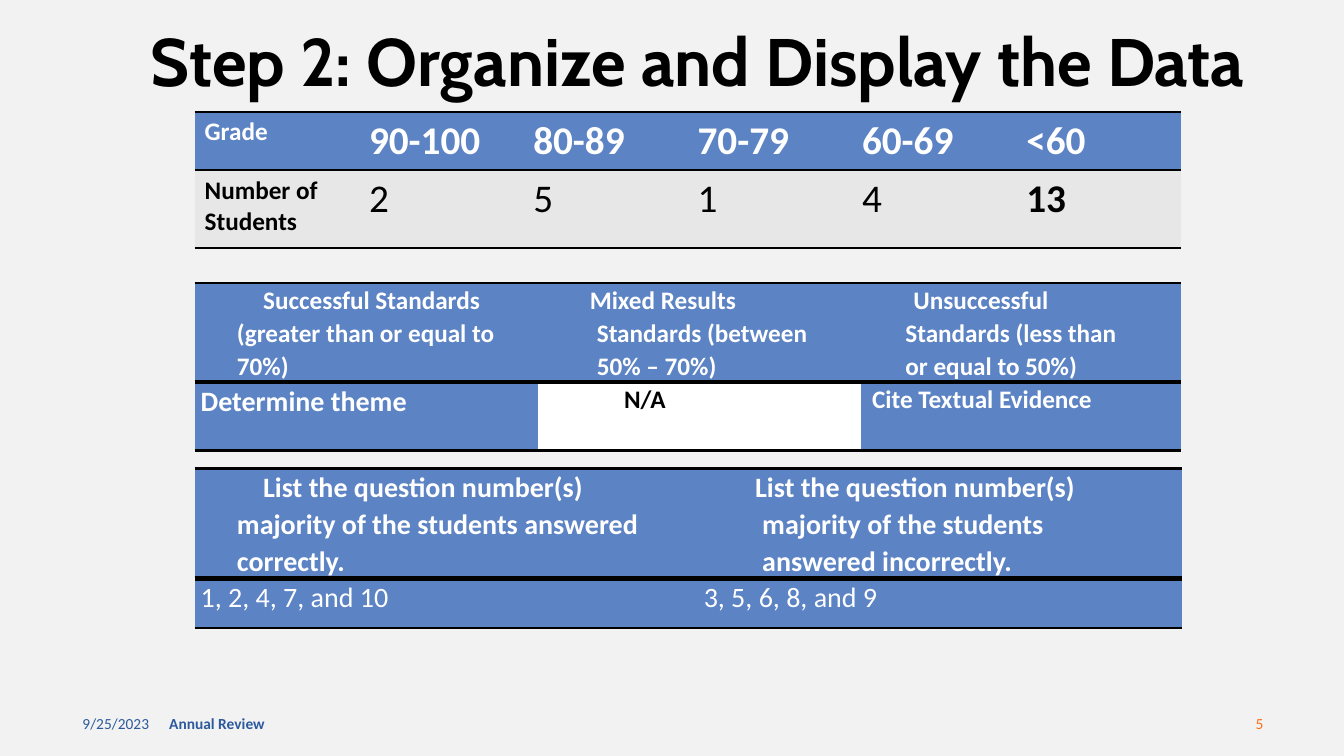
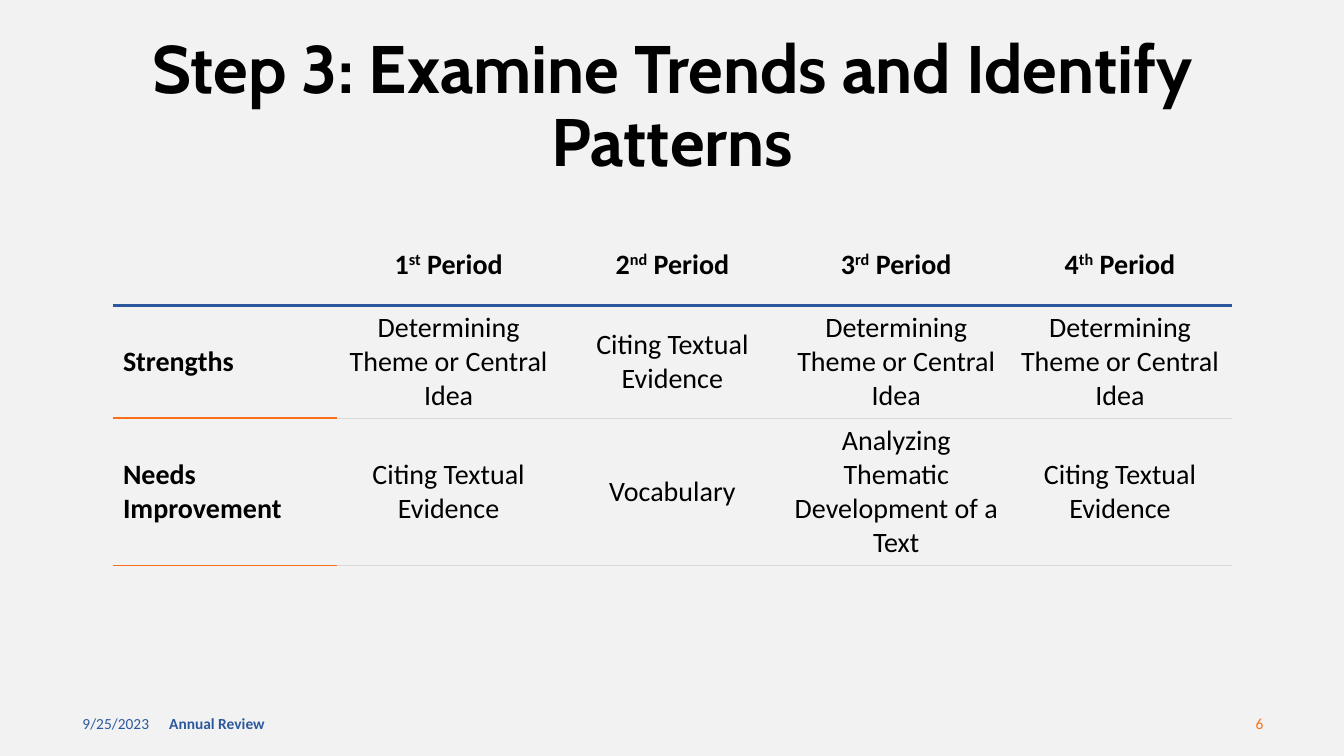
from lxml.etree import SubElement
from pptx import Presentation
from pptx.dml.color import RGBColor
from pptx.enum.text import MSO_ANCHOR, PP_ALIGN
from pptx.oxml.ns import qn
from pptx.util import Inches, Pt

BLACK, WHITE, PAGE = "000000", "FFFFFF", "F2F2F2"
BLUE, NAVY, ORANGE = "5C83C4", "2C599D", "FA6F1A"
PALE, SILVER = "E7E7E7", "D9D9D9"
PLAIN = "{2D5ABB26-0587-4C30-8999-92F81FD0307C}"

BODY = {"name": "Calibri", "size": Pt(18)}
LARGE = BODY | {"size": Pt(20)}
HUGE = BODY | {"size": Pt(28)}
BOLD = {"bold": True}
LIGHT = {"color": WHITE}
TITLE = {"name": "Cabin", "size": Pt(48)} | BOLD
SMALL = {"name": "Calibri", "size": Pt(11), "color": NAVY}
MIDDLE = {"vertical_anchor": MSO_ANCHOR.MIDDLE}
CENTER = {"alignment": PP_ALIGN.CENTER}
LOOSE = {"line_spacing": 1.07}


def rgb(code):
    return RGBColor.from_string(code)


def apply(item, values):
    for key, value in values.items():
        setattr(item, key, value)


def write(para, text, font, form):
    """Fill a paragraph; text between ^ marks is raised."""
    apply(para, form)
    look = {"color": BLACK} | font
    color = look.pop("color")
    for i, part in enumerate(text.split("^")):
        run = para.add_run()
        run.text = part
        apply(run.font, look)
        run.font.color.rgb = rgb(color)
        if i % 2:
            run.font._element.set("baseline", "30000")


def label(slide, at, text, font, form):
    box = slide.shapes.add_textbox(*map(Inches, at))
    frame = box.text_frame
    apply(frame, MIDDLE | {"word_wrap": True})
    write(frame.paragraphs[0], text, font, form)


def edge(cell, side, color, width):
    line = SubElement(cell._tc.get_or_add_tcPr(), qn("a:" + side), w=str(Pt(width)))
    fill = SubElement(line, qn("a:solidFill"))
    SubElement(fill, qn("a:srgbClr"), val=color)


def table(slide, left, top, cols, rows, lines):
    """Add a plain table; lines(row, col) gives the rule above that row, or None."""
    size = [Inches(n) for n in (left, top, sum(cols), sum(rows))]
    grid = slide.shapes.add_table(len(rows), len(cols), *size).table
    apply(grid, {"first_row": False, "horz_banding": False})
    grid._tbl.tblPr.find(qn("a:tableStyleId")).text = PLAIN
    for col, width in zip(grid.columns, cols):
        col.width = Inches(width)
    for r, height in enumerate(rows):
        grid.rows[r].height = Inches(height)
        for c in range(len(cols)):
            for side, at in (("lnT", r), ("lnB", r + 1)):
                rule = lines(at, c)
                if rule:
                    edge(grid.cell(r, c), side, *rule)
    return grid


def put(cell, text, font, form={}, fill=None, inset={}):
    apply(cell, inset)
    if fill:
        cell.fill.solid()
        cell.fill.fore_color.rgb = rgb(fill)
    else:
        cell.fill.background()
    if text:
        write(cell.text_frame.paragraphs[0], text, font, form)


def page(deck, number, title, left, top):
    slide = deck.slides.add_slide(deck.slide_layouts[6])
    slide.background.fill.solid()
    slide.background.fill.fore_color.rgb = rgb(PAGE)
    label(slide, (0.72, 6.98, 3, 0.4), "9/25/2023", SMALL, {})
    label(slide, (1.58, 6.98, 4.5, 0.4), "Annual Review", SMALL | BOLD, {})
    label(slide, (9.63, 6.98, 3, 0.4), str(number), SMALL | {"color": ORANGE},
          {"alignment": PP_ALIGN.RIGHT})
    label(slide, (left, top, 11.5, 0.77), title, TITLE, CENTER | {"line_spacing": 0.9})
    return slide


def grades(slide):
    data = [("Grade", "90-100", "80-89", "70-79", "60-69", "<60"),
            ("Number of Students", "2", "5", "1", "4", "13")]
    grid = table(slide, 1.93, 1.11, [1.63] * 6, [0.58, 0.77],
                 lambda row, col: (BLACK, 1.5))
    for r, row in enumerate(data):
        for c, text in enumerate(row):
            font = HUGE if c else BODY
            if r == 0:
                font = font | LIGHT
            font = font | {"bold": r == 0 or c in (0, 5)}
            put(grid.cell(r, c), text, font, fill=PALE if r else BLUE)


def pad(left=0, right=0):
    return {"margin_left": Inches(left), "margin_right": Inches(right),
            "margin_top": 0, "margin_bottom": 0}


def split(slide, top, cols, rows, heads, cells, font):
    """Table of indented headings above one row of (text, font, fill, inset) cells."""
    grid = table(slide, 1.93, top, cols, rows,
                 lambda row, col: (BLACK, 4 if row == 1 else 2))
    for c, (text, left, first) in enumerate(heads):
        cell = grid.cell(0, c)
        put(cell, text, font | LIGHT | BOLD, LOOSE, BLUE, pad(right=0.38))
        props = cell.text_frame.paragraphs[0]._p.get_or_add_pPr()
        for key, value in (("marL", left), ("indent", first)):
            props.set(key, str(Inches(value)))
    for c, (text, look, fill, left) in enumerate(cells):
        put(grid.cell(1, c), text, look, LOOSE, fill, pad(left))


def periods(slide):
    theme, cite = "Determining Theme or Central Idea", "Citing Textual Evidence"
    data = [("", "1^st^ Period", "2^nd^ Period", "3^rd^ Period", "4^th^ Period"),
            ("Strengths", theme, cite, theme, theme),
            ("Needs Improvement", cite, "Vocabulary",
             "Analyzing Thematic Development of a Text", cite),
            ("",) * 5]

    def rule(row, col):
        if row == 1:
            return NAVY, 3
        if row in (2, 3):
            return (SILVER, 1) if col else (ORANGE, 1.5)

    grid = table(slide, 1.12, 2.22, [2.22] * 5, [0.81, 1.12, 1.46, 0.81], rule)
    for r, row in enumerate(data):
        for c, text in enumerate(row):
            font = LARGE | {"bold": r == 0 or c == 0}
            put(grid.cell(r, c), text, font, CENTER if c else {}, inset=MIDDLE)


def main():
    deck = Presentation()
    apply(deck, {"slide_width": Inches(13.33), "slide_height": Inches(7.5)})

    slide = page(deck, 5, "Step 2: Organize and Display the Data", 1.17, 0.26)
    grades(slide)
    split(slide, 2.81, [3.41, 3.2, 3.17], [0.98, 0.68],
          [("Successful Standards (greater than or equal to 70%)", 0.42, 0.26),
           ("Mixed Results Standards (between 50% – 70%)", 0.58, -0.07),
           ("Unsuccessful Standards (less than or equal to 50%)", 0.44, 0.08)],
          [("Determine theme", LARGE | LIGHT | BOLD, BLUE, 0.06),
           ("N/A", BODY | BOLD, WHITE, 0.85),
           ("Cite Textual Evidence", BODY | LIGHT | BOLD, BLUE, 0.11)], BODY)
    ask = "List the question number(s) majority of the students answered "
    split(slide, 4.65, [5.05, 4.74], [1.09, 0.49],
          [(ask + "correctly.", 0.42, 0.26), (ask + "incorrectly.", 0.58, -0.07)],
          [("1, 2, 4, 7, and 10", LARGE | LIGHT, BLUE, 0.06),
           ("3, 5, 6, 8, and 9", LARGE | LIGHT, BLUE, 0)], LARGE)

    slide = page(deck, 6, "Step 3: Examine Trends and Identify Patterns", 0.92, 0.69)
    periods(slide)
    deck.save("out.pptx")


if __name__ == "__main__":
    main()
